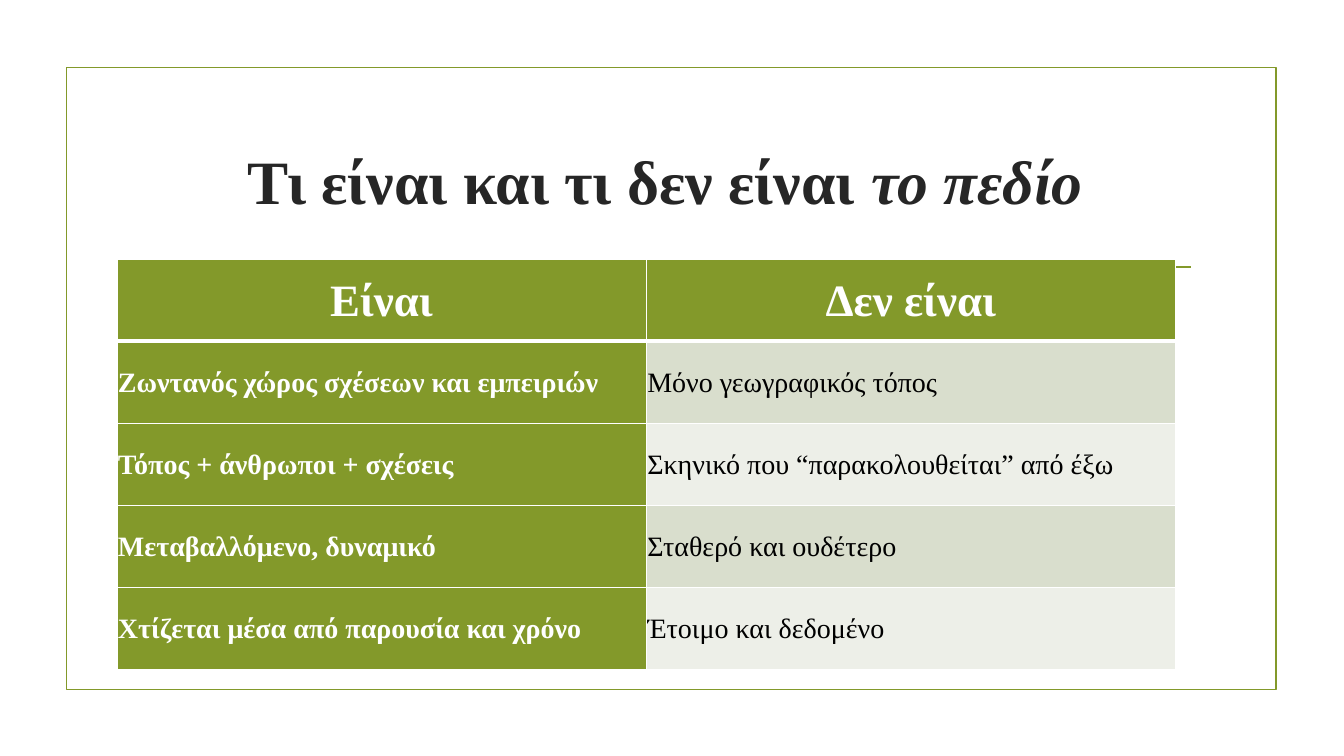
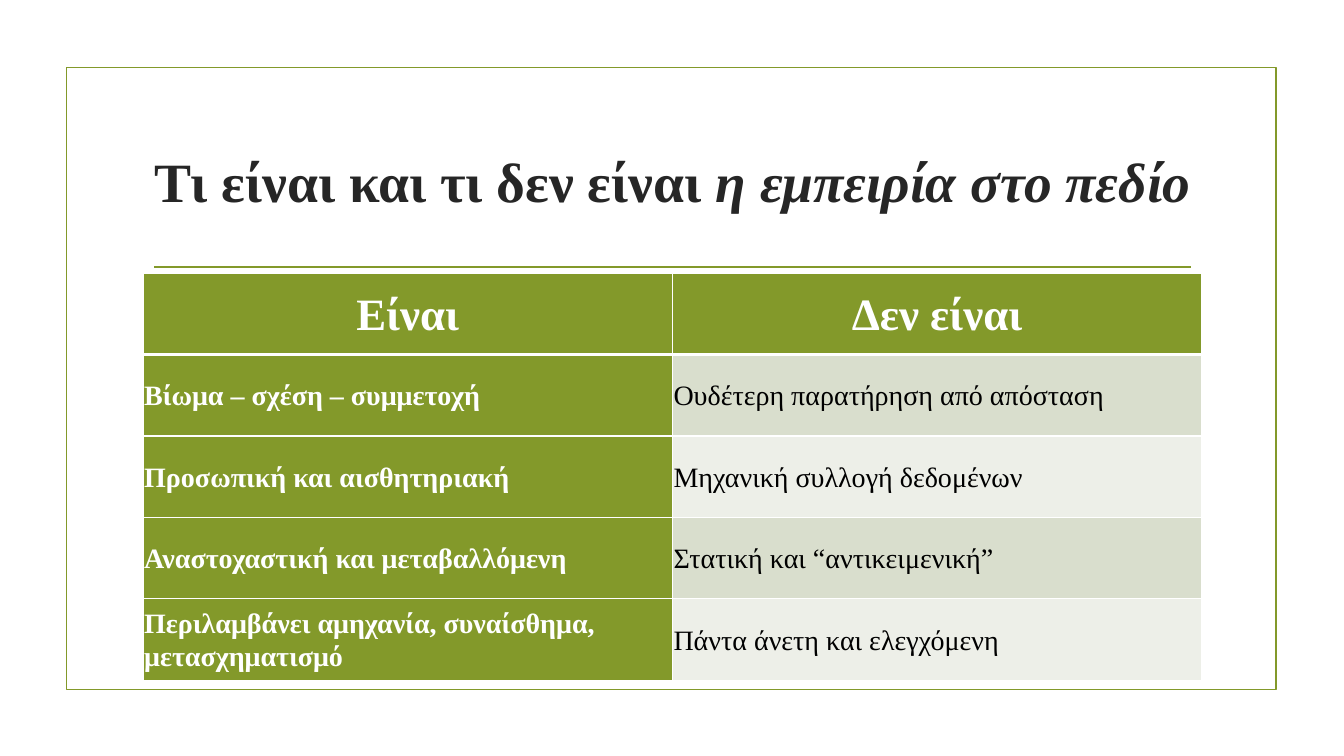
from lxml import etree
from pptx import Presentation
from pptx.dml.color import RGBColor
from pptx.enum.shapes import MSO_CONNECTOR, MSO_SHAPE
from pptx.enum.text import MSO_ANCHOR, PP_ALIGN
from pptx.oxml.ns import qn
from pptx.util import Inches, Pt

OLIVE = RGBColor(0x83, 0x99, 0x2A)
BAND_DARK = RGBColor(0xD9, 0xDE, 0xCD)
BAND_LIGHT = RGBColor(0xED, 0xEF, 0xE8)
INK = RGBColor(0x26, 0x26, 0x26)
BLACK = RGBColor(0, 0, 0)
WHITE = RGBColor(0xFF, 0xFF, 0xFF)
FONT = "Times New Roman"

CENTER = PP_ALIGN.CENTER
LEFT = PP_ALIGN.LEFT
MIDDLE = MSO_ANCHOR.MIDDLE
RECTANGLE = MSO_SHAPE.RECTANGLE
STRAIGHT = MSO_CONNECTOR.STRAIGHT

HEADINGS = ("Είναι", "Δεν είναι")
TITLE_START = "Τι είναι και τι δεν είναι "


def add_run(paragraph, text, size=20, color=BLACK, bold=False, italic=False):
    run = paragraph.add_run()
    run.text = text
    font = run.font
    font.name, font.size, font.bold, font.italic = FONT, Pt(size), bold, italic
    font.color.rgb = color


def set_borders(cell, top=1, bottom=1):
    """Draw white cell borders; widths are in points."""
    properties = cell._tc.get_or_add_tcPr()
    for side, width in (("L", 1), ("R", 1), ("T", top), ("B", bottom)):
        border = etree.SubElement(properties, qn(f"a:ln{side}"), w=str(Pt(width)))
        fill = etree.SubElement(border, qn("a:solidFill"))
        etree.SubElement(fill, qn("a:srgbClr"), val=str(WHITE))


class Deck:
    """Holds the shared style and the slide being built."""

    def __init__(self):
        self.presentation = Presentation()
        self.presentation.slide_width = Inches(13.33)
        self.presentation.slide_height = Inches(7.5)
        self.slide = None

    def new_slide(self):
        blank = self.presentation.slide_layouts[6]
        self.slide = self.presentation.slides.add_slide(blank)
        self.frame()
        self.title_rule()

    def frame(self):
        frame = self.slide.shapes.add_shape(
            RECTANGLE, Inches(0.66), Inches(0.67), Inches(12), Inches(6.17))
        frame.shadow.inherit = False
        frame.fill.background()
        frame.line.color.rgb = OLIVE
        frame.line.width = Pt(1.25)

    def title_rule(self):
        rule = self.slide.shapes.add_connector(
            STRAIGHT, Inches(1.53), Inches(2.65), Inches(11.81), Inches(2.65))
        rule.line.color.rgb = OLIVE
        rule.line.width = Pt(1.25)
        etree.SubElement(rule._element.spPr, qn("a:effectLst"))

    def title(self, subject, size):
        box = self.slide.shapes.add_textbox(
            Inches(1.42), Inches(1.07), Inches(10.5), Inches(1.43))
        frame = box.text_frame
        frame.word_wrap = True
        frame.vertical_anchor = MIDDLE
        paragraph = frame.paragraphs[0]
        paragraph.alignment = CENTER
        add_run(paragraph, TITLE_START, size=size, color=INK, bold=True)
        add_run(paragraph, subject, size=size, color=INK, bold=True, italic=True)

    def comparison(self, left, top, height, pairs):
        rows = [HEADINGS, *pairs]
        table = self.slide.shapes.add_table(
            len(rows), 2, Inches(left), Inches(top), Inches(10.5), Inches(height)).table
        for row_index, pair in enumerate(rows):
            table.rows[row_index].height = Inches(height / len(rows))
            for column_index, text in enumerate(pair):
                self.cell(table.cell(row_index, column_index), text,
                          row_index, column_index)

    def cell(self, cell, text, row, column):
        heading = row == 0
        accented = heading or column == 0
        set_borders(cell, top=3 if row == 1 else 1, bottom=3 if heading else 1)
        cell.fill.solid()
        band = BAND_DARK if row % 2 else BAND_LIGHT
        cell.fill.fore_color.rgb = OLIVE if accented else band
        cell.vertical_anchor = MIDDLE
        cell.margin_left = cell.margin_right = Inches(0.01)
        cell.margin_top = cell.margin_bottom = Inches(0.01)
        paragraph = cell.text_frame.paragraphs[0]
        paragraph.alignment = CENTER if heading else LEFT
        paragraph.line_spacing = 1.07
        paragraph.space_after = Pt(8)
        add_run(paragraph, text, size=32 if heading else 20,
                color=WHITE if accented else BLACK, bold=accented)


def main():
    deck = Deck()

    deck.new_slide()
    deck.title("το πεδίο ", size=44)
    deck.comparison(1.16, 2.57, 4.07, [
        ("Ζωντανός χώρος σχέσεων και εμπειριών", "Μόνο γεωγραφικός τόπος"),
        ("Τόπος + άνθρωποι + σχέσεις", "Σκηνικό που “παρακολουθείται” από έξω"),
        ("Μεταβαλλόμενο, δυναμικό", "Σταθερό και ουδέτερο"),
        ("Χτίζεται μέσα από παρουσία και χρόνο", "Έτοιμο και δεδομένο"),
    ])

    deck.new_slide()
    deck.title("η εμπειρία στο πεδίο", size=39.6)
    deck.comparison(1.42, 2.71, 4.04, [
        ("Βίωμα – σχέση – συμμετοχή", "Ουδέτερη παρατήρηση από απόσταση"),
        ("Προσωπική και αισθητηριακή", "Μηχανική συλλογή δεδομένων"),
        ("Αναστοχαστική και μεταβαλλόμενη", "Στατική και “αντικειμενική”"),
        ("Περιλαμβάνει αμηχανία, συναίσθημα, μετασχηματισμό",
         "Πάντα άνετη και ελεγχόμενη"),
    ])

    deck.presentation.save("out.pptx")


if __name__ == "__main__":
    main()
